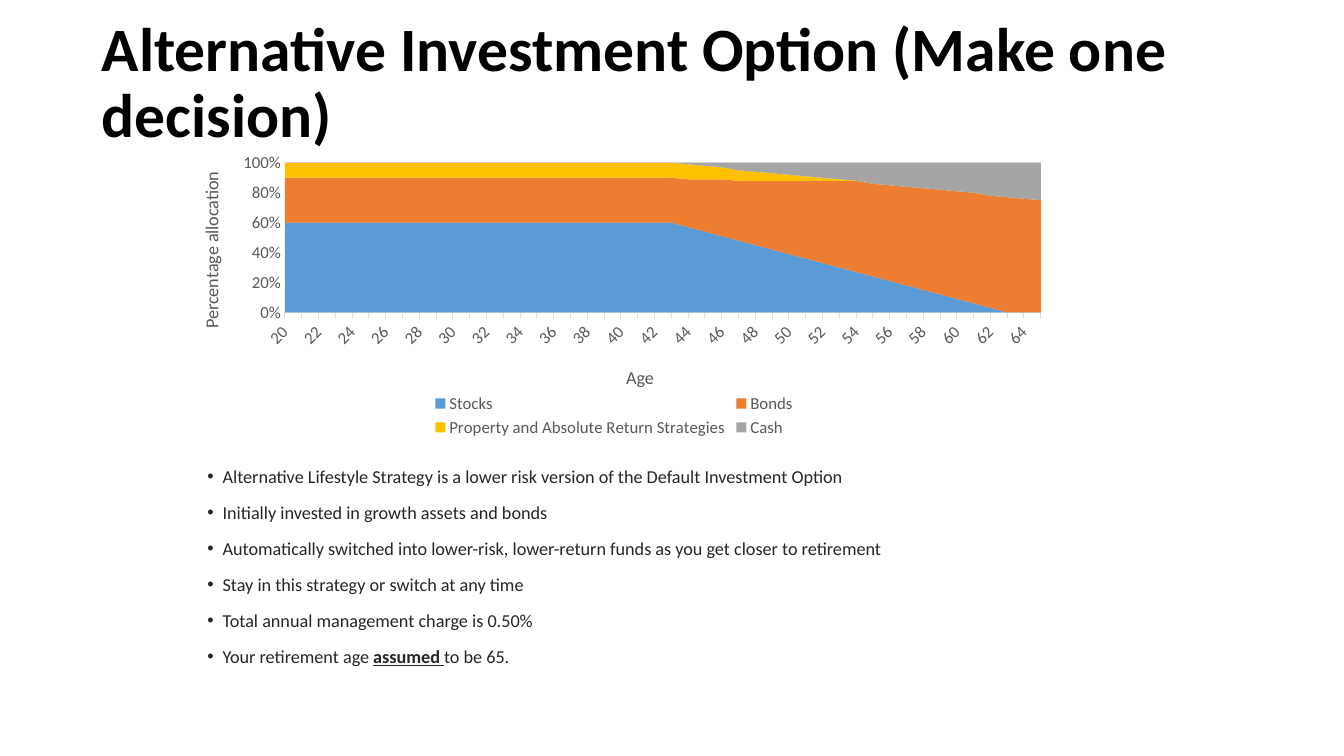
from lxml import etree
from pptx import Presentation
from pptx.chart.data import CategoryChartData
from pptx.dml.color import RGBColor
from pptx.enum import chart as chart_enum, text
from pptx.oxml import ns
from pptx.util import Inches, Pt

FONT = "Calibri"
COLORS = {
    "title": "000000", "body": "262626", "label": "595959", "rule": "D9D9D9",
    "Stocks": "5B9BD5", "Bonds": "ED7D31",
    "Property and Absolute Return Strategies": "FFC000", "Cash": "A5A5A5",
}
AGES = range(20, 66)
STEADY_YEARS = 24  # the mix is constant from 20 to 43
ALLOCATION = {  # percentages for each age
    "Stocks": [60] * STEADY_YEARS + list(range(57, 0, -3)) + [0] * 3,
    "Bonds": [30] * STEADY_YEARS + [
        32, 35, 38, 40, 43, 46, 49, 52, 55, 58, 61,
        62, 64, 66, 68, 70, 72, 74, 75, 77, 76, 75],
    "Property and Absolute Return Strategies":
        [10] * STEADY_YEARS + list(range(10, 0, -1)) + [0] * 12,
    "Cash": [0] * STEADY_YEARS + [
        1, 2, 3, 5, 6, 7, 8, 9, 10, 11, 13,
        14, 15, 16, 17, 18, 19, 20, 22, 23, 24, 25],
}
BULLETS = [
    ["Alternative Lifestyle Strategy is a lower risk version of the Default Investment Option"],
    ["Initially invested in growth assets and bonds"],
    ["Automatically switched into lower-risk, lower-return funds as you get closer to retirement"],
    ["Stay in this strategy or switch at any time"],
    ["Total annual management charge is 0.50%"],
    ["Your retirement age ", "assumed ", "to be 65."],
]
EMPHASIZED = "assumed "


def color(name):
    return RGBColor.from_string(COLORS[name])


def set_font(font, size, color_name, bold=False):
    font.name = FONT
    font.size = Pt(size)
    font.bold = bold
    font.color.rgb = color(color_name)


def add_title(slide, wording):
    title = slide.shapes.title
    title.left, title.top = Inches(0.91), Inches(0.13)
    title.width, title.height = Inches(12), Inches(0.52)
    frame = title.text_frame
    frame.word_wrap = True
    frame.auto_size = text.MSO_AUTO_SIZE.NONE
    frame.vertical_anchor = text.MSO_ANCHOR.TOP
    paragraph = frame.paragraphs[0]
    paragraph.alignment = text.PP_ALIGN.LEFT
    paragraph.line_spacing = 0.9
    run = paragraph.add_run()
    run.text = wording
    set_font(run.font, 44, "title", bold=True)


def add_bullets(slide):
    box = slide.shapes.add_textbox(Inches(1.96), Inches(4.46), Inches(8.74), Inches(2.29))
    frame = box.text_frame
    frame.word_wrap = True
    for index, wordings in enumerate(BULLETS):
        paragraph = frame.add_paragraph() if index else frame.paragraphs[0]
        paragraph.line_spacing = 1.5
        paragraph.space_before = Pt(2.3)
        properties = paragraph._p.get_or_add_pPr()
        properties.set("marL", str(Inches(0.15)))
        properties.set("indent", str(Inches(-0.15)))
        etree.SubElement(properties, ns.qn("a:buFont"), typeface="Arial")
        etree.SubElement(properties, ns.qn("a:buChar"), char="•")
        for wording in wordings:
            run = paragraph.add_run()
            run.text = wording
            set_font(run.font, 13, "body", bold=wording == EMPHASIZED)
            run.font.underline = wording == EMPHASIZED


def place(element, **fractions):
    """Fix a chart part at fractions (x, y, w, h) of the chart's size."""
    for old_layout in element.findall(ns.qn("c:layout")):
        element.remove(old_layout)
    layout = etree.Element(ns.qn("c:layout"))
    manual = etree.SubElement(layout, ns.qn("c:manualLayout"))
    if "w" in fractions:
        etree.SubElement(manual, ns.qn("c:layoutTarget"), val="inner")
    for key in ("x", "y"):
        etree.SubElement(manual, ns.qn(f"c:{key}Mode"), val="edge")
    for key, fraction in fractions.items():
        etree.SubElement(manual, ns.qn(f"c:{key}"), val=str(fraction))
    wording = element.find(ns.qn("c:tx"))
    element.insert(0 if wording is None else 1, layout)


def rotate_text(element, degrees):
    """Turn the text held by a chart part's text body."""
    element.find(ns.qn("a:bodyPr")).set("rot", str(degrees * 60000))


def format_axis(axis, wording, x, y):
    set_font(axis.tick_labels.font, 12, "label")
    axis.minor_tick_mark = chart_enum.XL_TICK_MARK.NONE
    run = axis.axis_title.text_frame.paragraphs[0].add_run()
    run.text = wording
    set_font(run.font, 13, "label")
    place(axis.axis_title._element, x=x, y=y)


def format_rule(line):
    line.color.rgb = color("rule")
    line.width = Pt(0.75)


def add_allocation_chart(slide):
    data = CategoryChartData(number_format="0%")
    data.categories = [str(age) for age in AGES]
    for name, percentages in ALLOCATION.items():
        data.add_series(name, [value / 100 for value in percentages])
    chart = slide.shapes.add_chart(
        chart_enum.XL_CHART_TYPE.AREA_STACKED,
        Inches(1.68), Inches(1.47), Inches(8.82), Inches(2.91), data).chart
    set_font(chart.font, 10, "title")
    chart.has_title = False
    chart.has_legend = True
    chart.legend.position = chart_enum.XL_LEGEND_POSITION.BOTTOM
    chart.legend.include_in_layout = False
    set_font(chart.legend.font, 12, "label")
    plot = chart.plots[0]
    plot.vary_by_categories = False
    for series in plot.series:
        series.format.fill.solid()
        series.format.fill.fore_color.rgb = color(series.name)
        series.format.line.fill.background()

    ages = chart.category_axis
    format_axis(ages, "Age", x=0.51, y=0.73)
    ages.major_tick_mark = chart_enum.XL_TICK_MARK.OUTSIDE
    format_rule(ages.format.line)
    rotate_text(ages._element.find(ns.qn("c:txPr")), -45)
    no_multi_level = ages._element.find(ns.qn("c:noMultiLvlLbl"))
    no_multi_level.addprevious(etree.Element(ns.qn("c:tickLblSkip"), val="2"))

    shares = chart.value_axis
    format_axis(shares, "Percentage allocation", x=0.03, y=0.07)
    shares.minimum_scale, shares.maximum_scale, shares.major_unit = 0, 1, 0.2
    shares.major_tick_mark = chart_enum.XL_TICK_MARK.NONE
    shares.tick_labels.number_format = "0%"
    shares.tick_labels.number_format_is_linked = False
    shares.format.line.fill.background()
    shares.has_major_gridlines = True
    format_rule(shares.major_gridlines.format.line)
    shares._element.find(ns.qn("c:crossBetween")).set("val", "midCat")
    rotate_text(shares.axis_title.text_frame._txBody, -90)
    place(chart._chartSpace.chart.plotArea, x=0.13, y=0.05, w=0.85, h=0.51)


def main():
    presentation = Presentation()
    presentation.slide_width = Inches(13.33)
    presentation.slide_height = Inches(7.5)
    slide = presentation.slides.add_slide(presentation.slide_layouts[5])
    add_title(slide, "Alternative Investment Option (Make one decision)")
    add_allocation_chart(slide)
    add_bullets(slide)
    presentation.save("out.pptx")


if __name__ == "__main__":
    main()
